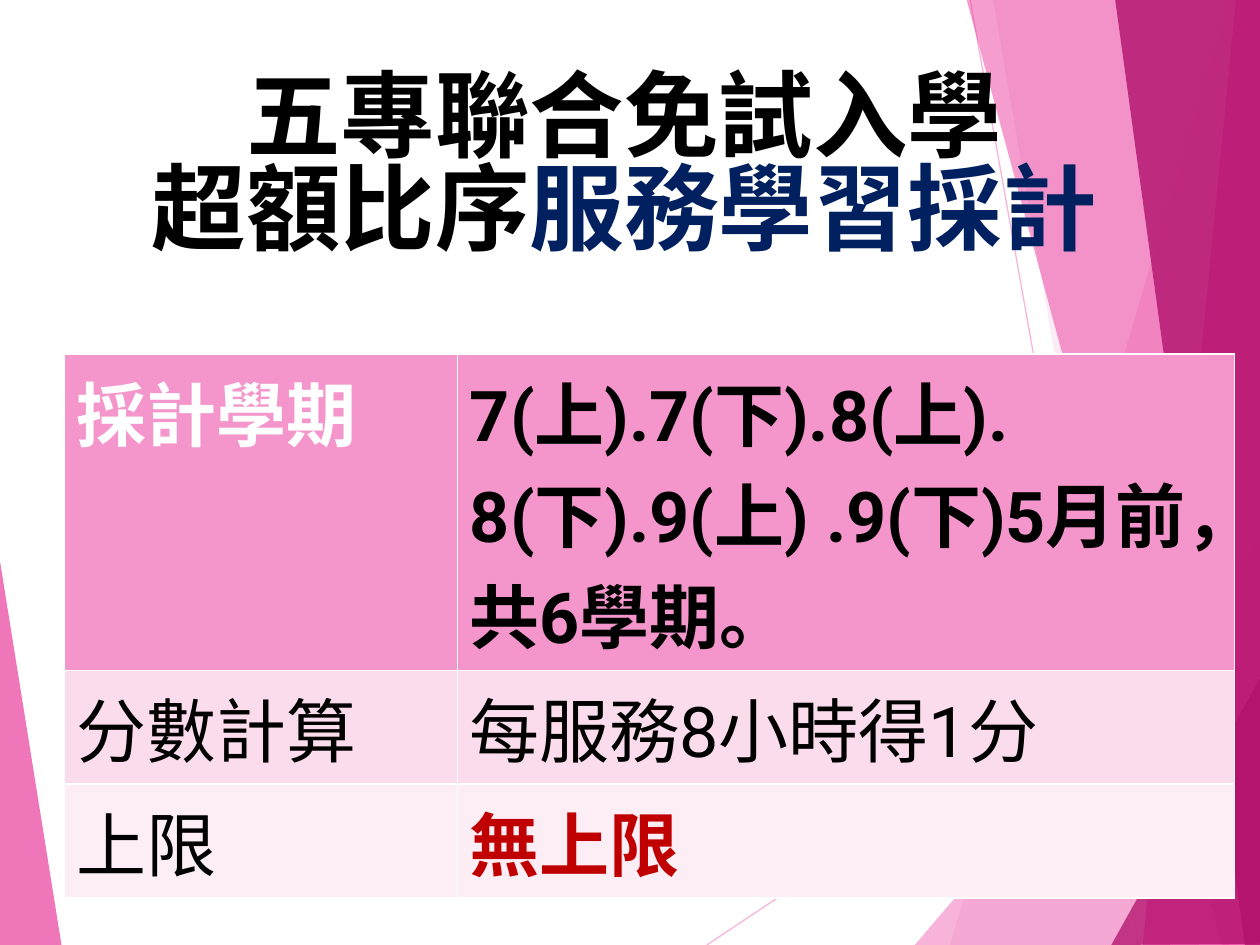
from lxml.etree import SubElement
from pptx import Presentation
from pptx.dml.color import RGBColor
from pptx.enum.shapes import MSO_CONNECTOR
from pptx.enum.text import MSO_ANCHOR as ANCHOR, MSO_AUTO_SIZE as AUTO_SIZE, PP_ALIGN as ALIGN
from pptx.oxml.ns import qn
from pptx.util import Inches, Pt

FONT = "Roboto"
BLACK, WHITE, NAVY, RED = "000000", "FFFFFF", "002060", "C00000"
PINK, ROSE, MAGENTA = "F496CB", "EA3C9E", "B2126C"

TITLE_LINES = [
    [("五專聯合免試入學", BLACK)],
    [("超額比序", BLACK), ("服務學習採計", NAVY)],
]
TABLE_ROWS = [
    (2.5, PINK, [("採計學期", WHITE, True),
                 ("7(上).7(下).8(上). 8(下).9(上) .9(下)5月前，共6學期。", BLACK, True)]),
    (0.89, "FBDCEC", [("分數計算", BLACK, False), ("每服務8小時得1分", BLACK, False)]),
    (0.9, "FDEEF6", [("上限", BLACK, False), ("無上限", RED, True)]),
]
COLUMN_WIDTHS = [3.12, 6.17]
RAYS = [((5.61, 7.5), (10.01, 4.57)), ((7.7, 0), (9.04, 7.5))]
FACETS = [
    (PINK, 36, [(9.75, 0), (7.54, 7.5), (10.02, 7.51), (10.01, 0.01)]),
    (PINK, 20, [(7.88, -0.01), (9.19, 7.5), (10.01, 7.5), (10.01, -0.01)]),
    (PINK, 72, [(7.26, 7.5), (10, 4.29), (10.01, 7.5)]),
    (ROSE, 50, [(7.67, -0.01), (9.7, 7.5), (10.01, 7.49), (10.01, -0.01)]),
    (ROSE, 66, [(9.81, -0.01), (9.07, 7.5), (10.01, 7.5), (10, -0.01)]),
    (MAGENTA, 80, [(8.85, -0.01), (9.88, 7.5), (10.02, 7.5), (10, -0.01)]),
    (MAGENTA, 76, [(8.82, 7.5), (10.02, 5.35), (10.02, 7.49)]),
    (ROSE, 70, [(-0.01, 4.39), (0.49, 7.51), (-0.01, 7.5)]),
]


def set_fill(fill, color, opacity=100):
    fill.solid()
    fill.fore_color.rgb = RGBColor.from_string(color)
    if opacity < 100:
        color_element = fill._xPr.find(qn("a:solidFill"))[0]
        SubElement(color_element, qn("a:alpha"), val=str(opacity * 1000))


def add_text(paragraph, text, size, color, bold=False):
    run = paragraph.add_run()
    run.text = text
    run.font.name = FONT
    run.font.size = Pt(size)
    run.font.bold = bold
    set_fill(run.font.fill, color)


def add_ray(slide, start, end):
    points = [Inches(value) for value in start + end]
    connector = slide.shapes.add_connector(MSO_CONNECTOR.STRAIGHT, *points)
    connector.line.width = Pt(0.75)
    set_fill(connector.line.fill, PINK, 70)
    SubElement(connector._element.spPr, qn("a:effectLst"))


def add_facet(slide, color, opacity, points):
    corners = [(Inches(x), Inches(y)) for x, y in points]
    builder = slide.shapes.build_freeform(*corners[0], scale=1)
    builder.add_line_segments(corners[1:], close=True)
    shape = builder.convert_to_shape()
    shape.shadow.inherit = False
    shape.line.fill.background()
    set_fill(shape.fill, color, opacity)


def fill_title(slide):
    title = slide.shapes.title
    title.left, title.top = Inches(0.27), Inches(0.44)
    title.width, title.height = Inches(9.37), Inches(1.81)
    frame = title.text_frame
    frame.word_wrap = True
    frame.auto_size = AUTO_SIZE.NONE
    frame.vertical_anchor = ANCHOR.MIDDLE
    paragraph = frame.paragraphs[0]
    paragraph.alignment = ALIGN.CENTER
    paragraph.line_spacing = 0.82
    for index, line in enumerate(TITLE_LINES):
        if index:
            paragraph.add_line_break()
        for text, color in line:
            add_text(paragraph, text, 54, color, bold=True)
    slide.shapes._spTree.append(title._element)


def add_score_table(slide):
    heights = [height for height, _, _ in TABLE_ROWS]
    table = slide.shapes.add_table(
        len(TABLE_ROWS), len(COLUMN_WIDTHS), Inches(0.51), Inches(2.81),
        Inches(sum(COLUMN_WIDTHS)), Inches(sum(heights))).table
    for column, width in zip(table.columns, COLUMN_WIDTHS):
        column.width = Inches(width)
    for row, (height, color, cells) in zip(table.rows, TABLE_ROWS):
        row.height = Inches(height)
        for cell, (text, text_color, bold) in zip(row.cells, cells):
            set_fill(cell.fill, color)
            add_text(cell.text_frame.paragraphs[0], text, 40, text_color, bold)


def main():
    presentation = Presentation()
    presentation.slide_width, presentation.slide_height = Inches(10), Inches(7.5)
    slide = presentation.slides.add_slide(presentation.slide_layouts[5])
    set_fill(slide.background.fill, WHITE)
    for start, end in RAYS:
        add_ray(slide, start, end)
    for color, opacity, points in FACETS:
        add_facet(slide, color, opacity, points)
    fill_title(slide)
    add_score_table(slide)
    presentation.save("out.pptx")


if __name__ == "__main__":
    main()
